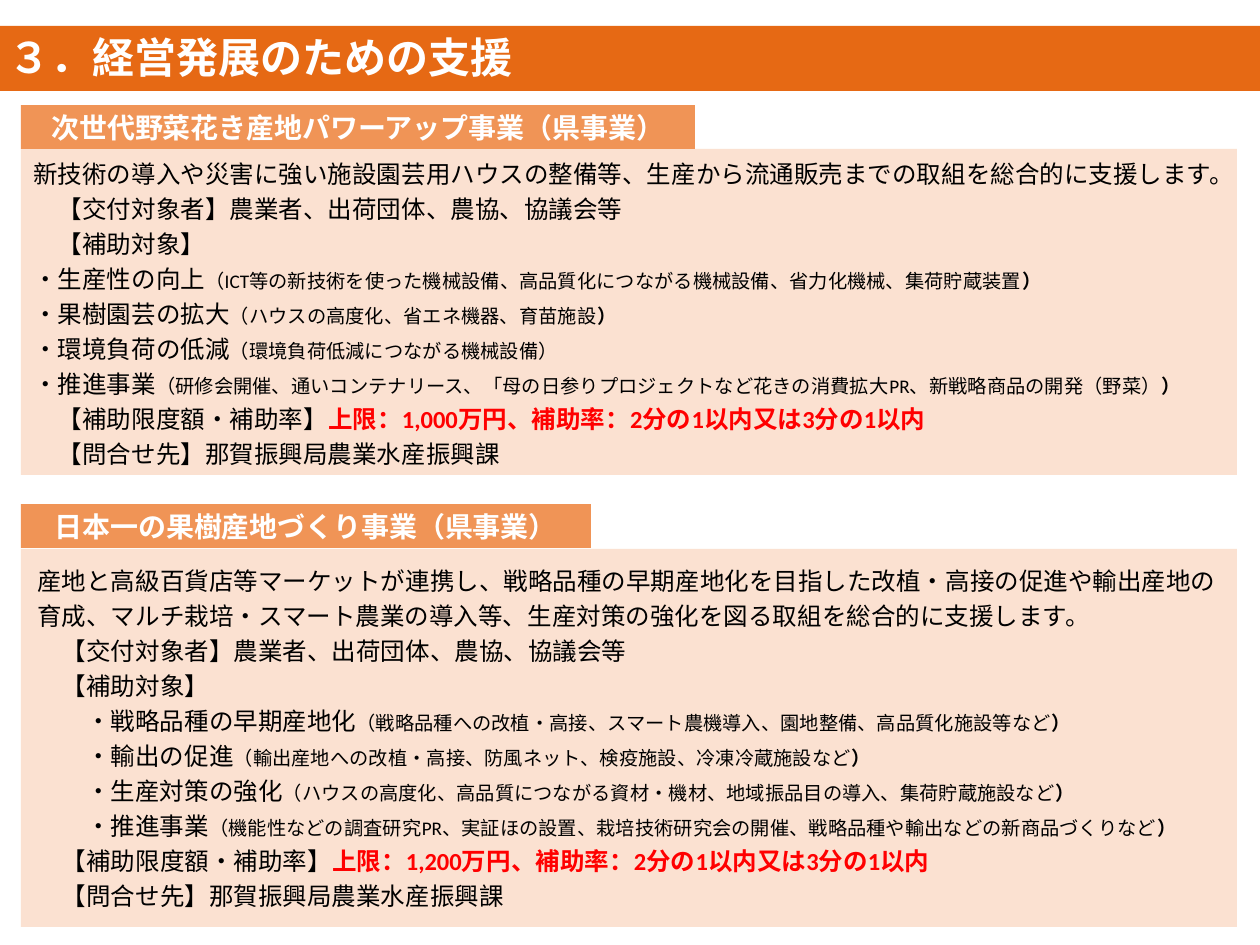
from dataclasses import dataclass

from pptx import Presentation, util as u
from pptx.dml.color import RGBColor
from pptx.enum import shapes, text
from pptx.oxml.xmlchemy import OxmlElement


@dataclass(frozen=True)
class Theme:
    font: str = "Calibri"
    band: str = "E66914"
    chip: str = "F09456"
    panel: str = "F8CBAD"
    panel_alpha: int = 56
    white: str = "FFFFFF"
    ink: str = "000000"
    alert: str = "FF0000"
    title_pt: int = 24
    chip_pt: int = 16
    body_pt: int = 14
    detail_pt: int = 11
    line_pt: int = 20


@dataclass(frozen=True)
class Box:
    x: int
    y: int
    w: int
    h: int


@dataclass(frozen=True)
class Line:
    label: str
    detail: str = ""
    closing: str = ""
    alert: str = ""
    indent: int = 0


@dataclass(frozen=True)
class Program:
    name: str
    chip: Box
    panel: Box
    body: Box
    summary: str
    targets: tuple[Line, ...]
    limit: str

    def lines(self) -> list[Line]:
        return [
            Line(self.summary),
            Line("【交付対象者】農業者、出荷団体、農協、協議会等", indent=1),
            Line("【補助対象】", indent=1),
            *self.targets,
            Line("【補助限度額・補助率】", indent=1,
                 alert=f"上限：{self.limit}万円、補助率：2分の1以内又は3分の1以内"),
            Line("【問合せ先】那賀振興局農業水産振興課", indent=1),
        ]


THEME = Theme()
PX_PER_INCH = 126

PROGRAMS = (
    Program(
        "次世代野菜花き産地パワーアップ事業（県事業）",
        Box(21, 105, 674, 44), Box(21, 149, 1216, 326), Box(21, 147, 1231, 295),
        "新技術の導入や災害に強い施設園芸用ハウスの整備等、生産から流通販売までの取組を総合的に支援します。",
        (
            Line("・生産性の向上", "（ICT等の新技術を使った機械設備、高品質化につながる機械設備、省力化機械、集荷貯蔵装置", "）"),
            Line("・果樹園芸の拡大", "（ハウスの高度化、省エネ機器、育苗施設", "）"),
            Line("・環境負荷の低減", "（環境負荷低減につながる機械設備）"),
            Line("・推進事業", "（研修会開催、通いコンテナリース、「母の日参りプロジェクトなど花きの消費拡大PR、新戦略商品の開発（野菜）", "）"),
        ),
        "1,000",
    ),
    Program(
        "日本一の果樹産地づくり事業（県事業）",
        Box(21, 504, 570, 44), Box(21, 549, 1216, 378), Box(25, 554, 1211, 373),
        "産地と高級百貨店等マーケットが連携し、戦略品種の早期産地化を目指した改植・高接の促進や輸出産地の育成、マルチ栽培・スマート農業の導入等、生産対策の強化を図る取組を総合的に支援します。",
        (
            Line("・戦略品種の早期産地化", "（戦略品種への改植・高接、スマート農機導入、園地整備、高品質化施設等など", "）", indent=2),
            Line("・輸出の促進", "（輸出産地への改植・高接、防風ネット、検疫施設、冷凍冷蔵施設など", "）", indent=2),
            Line("・生産対策の強化", "（ハウスの高度化、高品質につながる資材・機材、地域振品目の導入、集荷貯蔵施設など", "）", indent=2),
            Line("・推進事業", "（機能性などの調査研究PR、実証ほの設置、栽培技術研究会の開催、戦略品種や輸出などの新商品づくりなど", "）", indent=2),
        ),
        "1,200",
    ),
)


def px(n: int) -> u.Emu:
    return u.Emu(round(n * u.Inches(1) / PX_PER_INCH))


def place(box: Box) -> tuple[u.Emu, ...]:
    return px(box.x), px(box.y), px(box.w), px(box.h)


def style(font, size: int, color: str, bold: bool = False) -> None:
    font.name = THEME.font
    font.size = u.Pt(size)
    font.bold = bold
    font.color.rgb = RGBColor.from_string(color)


def add_rect(slide, box: Box, color: str, alpha: int = 100):
    sp = slide.shapes.add_shape(shapes.MSO_SHAPE.RECTANGLE, *place(box))
    sp.shadow.inherit = False
    sp.line.fill.background()
    sp.fill.solid()
    sp.fill.fore_color.rgb = RGBColor.from_string(color)
    if alpha < 100:
        opacity = OxmlElement("a:alpha")
        opacity.set("val", str(alpha * 1000))
        sp.fill._xPr.solidFill.srgbClr.append(opacity)
    return sp


def add_title(slide, wording: str) -> None:
    title = slide.shapes.title
    title.left, title.top, title.width, title.height = place(Box(0, 26, 591, 67))
    band = add_rect(slide, Box(0, 26, 1260, 65), THEME.band)
    title.element.addprevious(band.element)
    tf = title.text_frame
    tf.text = wording
    tf.word_wrap = True
    tf.auto_size = text.MSO_AUTO_SIZE.NONE
    tf.vertical_anchor = text.MSO_ANCHOR.MIDDLE
    tf.margin_left = tf.margin_right = px(9)
    tf.margin_top = tf.margin_bottom = px(5)
    p = tf.paragraphs[0]
    p.alignment = text.PP_ALIGN.LEFT
    p.line_spacing = 0.9
    style(p.font, THEME.title_pt, THEME.white, True)


def add_chip(slide, box: Box, wording: str) -> None:
    tf = add_rect(slide, box, THEME.chip).text_frame
    tf.text = wording
    tf.vertical_anchor = text.MSO_ANCHOR.MIDDLE
    p = tf.paragraphs[0]
    p.alignment = text.PP_ALIGN.CENTER
    style(p.font, THEME.chip_pt, THEME.white, True)


def write_line(p, line: Line) -> None:
    p.line_spacing = u.Pt(THEME.line_pt)
    p._p.get_or_add_pPr().set("marL", str(u.Pt(THEME.body_pt) * line.indent))
    style(p.font, THEME.body_pt, THEME.ink)
    p.add_run().text = line.label
    for wording, bold in ((line.detail, False), (line.closing, True)):
        if wording:
            r = p.add_run()
            r.text = wording
            style(r.font, THEME.detail_pt, THEME.ink, bold)
    if line.alert:
        r = p.add_run()
        r.text = line.alert
        style(r.font, THEME.body_pt, THEME.alert, True)


def add_program(slide, program: Program) -> None:
    add_rect(slide, program.panel, THEME.panel, THEME.panel_alpha)
    add_chip(slide, program.chip, program.name)
    tf = slide.shapes.add_textbox(*place(program.body)).text_frame
    tf.word_wrap = True
    for i, line in enumerate(program.lines()):
        write_line(tf.add_paragraph() if i else tf.paragraphs[0], line)


def main() -> None:
    prs = Presentation()
    prs.slide_width, prs.slide_height = px(1260), px(945)
    slide = prs.slides.add_slide(prs.slide_layouts.get_by_name("Title Only"))
    add_title(slide, "３．経営発展のための支援")
    for program in PROGRAMS:
        add_program(slide, program)
    prs.save("out.pptx")


if __name__ == "__main__":
    main()
